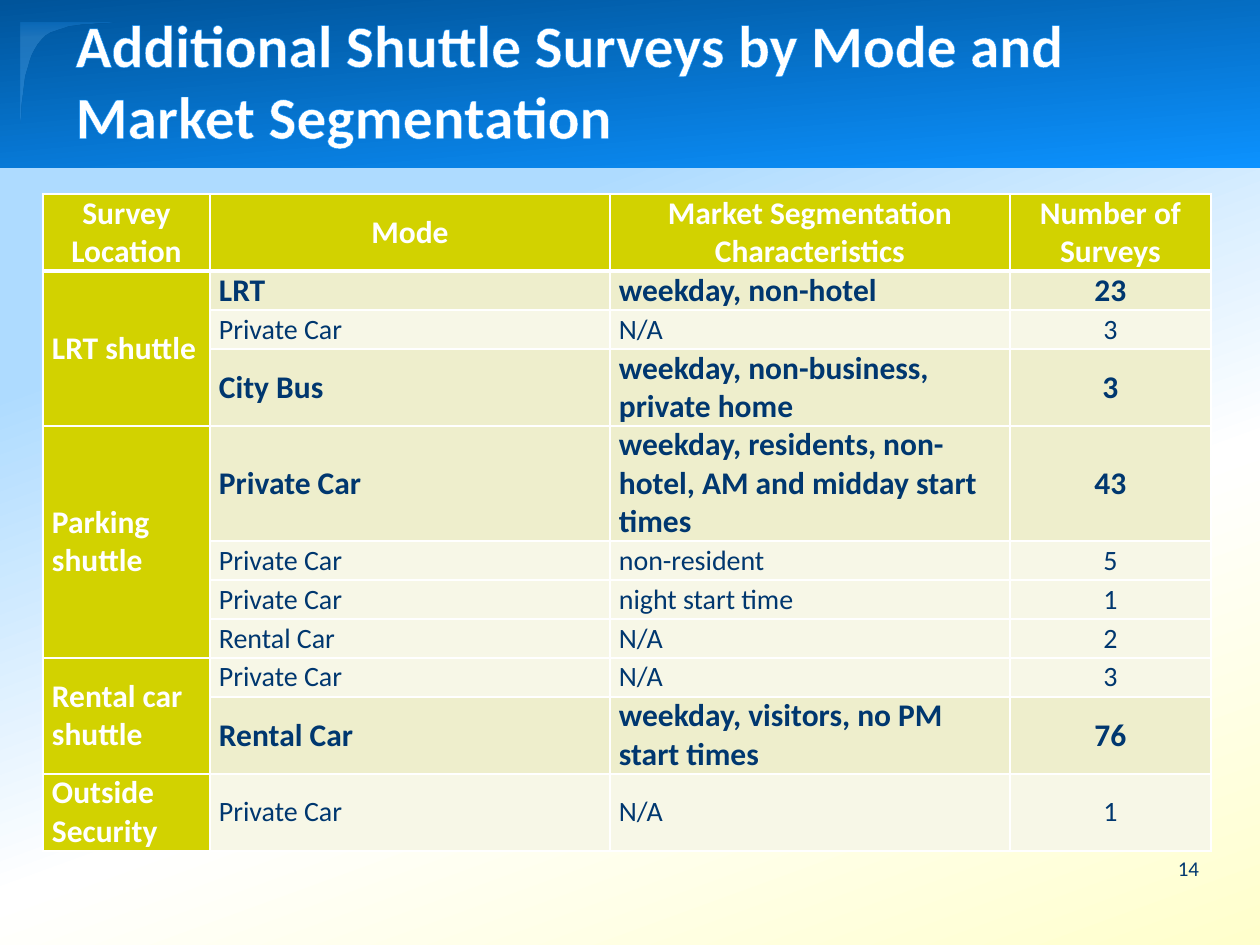
from lxml import etree
from pptx import Presentation
from pptx.dml.color import RGBColor
from pptx.enum.shapes import MSO_SHAPE
from pptx.enum.text import MSO_ANCHOR, MSO_AUTO_SIZE, PP_ALIGN
from pptx.oxml.ns import qn
from pptx.util import Pt

RECTANGLE = MSO_SHAPE.RECTANGLE
MIDDLE, BOTTOM = MSO_ANCHOR.MIDDLE, MSO_ANCHOR.BOTTOM
LEFT, CENTER = PP_ALIGN.LEFT, PP_ALIGN.CENTER
NO_FIT = MSO_AUTO_SIZE.NONE

WHITE = RGBColor(0xFF, 0xFF, 0xFF)
CREAM = RGBColor(0xFF, 0xFF, 0xCC)
SKY = RGBColor(0xAE, 0xDB, 0xFF)
DEEP_BLUE = RGBColor(0x00, 0x54, 0x9A)
BRIGHT_BLUE = RGBColor(0x0C, 0x92, 0xFF)
GLOW = RGBColor(0x29, 0x9E, 0xFF)
PALE_GLOW = RGBColor(0x7D, 0xC4, 0xFF)
NAVY = RGBColor(0x00, 0x37, 0x6F)
OLIVE = RGBColor(0xD2, 0xD2, 0x00)
STRONG_ROW = RGBColor(0xEE, 0xEE, 0xCC)
LIGHT_ROW = RGBColor(0xF7, 0xF7, 0xE7)

FONT = "Calibri"
PX = 914400 / 126  # EMU in one px


def px(length):
    return round(length * PX)


def shade(fill, owner, angle, stops):
    """Gradient with (position, colour, opacity) stops, angle clockwise."""
    fill.gradient()
    fill.gradient_angle = (360 - angle) % 360
    stop_list = next(owner.iter(qn("a:gsLst")))
    stop_list.clear()
    for position, colour, opacity in stops:
        stop = etree.SubElement(stop_list, qn("a:gs"), pos=str(position * 1000))
        tint = etree.SubElement(stop, qn("a:srgbClr"), val=str(colour))
        if opacity < 100:
            etree.SubElement(tint, qn("a:alpha"), val=str(opacity * 1000))


deck = Presentation()
deck.slide_width, deck.slide_height = px(1260), px(945)
page = deck.slides.add_slide(deck.slide_layouts[5])

# Background
shade(page.background.fill, page.element, 70,
      [(28, SKY, 100), (64, WHITE, 100), (100, CREAM, 100)])

# Title band
band = page.shapes.add_shape(RECTANGLE, 0, 0, px(1260), px(168))
shade(band.fill, band.element, 85, [(0, DEEP_BLUE, 100), (100, BRIGHT_BLUE, 100)])

# Corner glint, its curves sampled as short lines
curves = [
    [(42, 40), (59, 24), (88, 25), (123, 23)],
    [(21, 23), (21, 55), (20, 98), (21, 123)],
    [(21, 123), (24, 91), (25, 57), (42, 40)],
]
STEPS = 12
outline = []
for curve in curves:
    for step in range(STEPS + 1):
        t = step / STEPS
        weights = [(1 - t) ** 3, 3 * t * (1 - t) ** 2, 3 * t ** 2 * (1 - t), t ** 3]
        outline.append(tuple(sum(w * point[axis] for w, point in zip(weights, curve))
                             for axis in (0, 1)))
builder = page.shapes.build_freeform(*outline[0], scale=PX)
builder.add_line_segments(outline[1:], close=True)
glint = builder.convert_to_shape()
shade(glint.fill, glint.element, 90, [(0, GLOW, 22), (15, PALE_GLOW, 23)])
for shape in (band, glint):
    shape.line.fill.background()
    shape.shadow.inherit = False

# Title, brought in front of the band
title = page.shapes.title
page.shapes.element.append(title.element)
title.left, title.top, title.width, title.height = px(63), px(21), px(1134), px(136)
frame = title.text_frame
frame.text = "Additional Shuttle Surveys by Mode and Market Segmentation"
frame.auto_size, frame.vertical_anchor, frame.word_wrap = NO_FIT, BOTTOM, True
para = frame.paragraphs[0]
para.alignment = LEFT
span = para.runs[0]
for name, value in {"name": FONT, "size": Pt(34), "bold": True}.items():
    setattr(span.font, name, value)
span.font.color.rgb = WHITE
edge = etree.Element(qn("a:ln"), w=str(Pt(0.75)))
edge_fill = etree.SubElement(edge, qn("a:solidFill"))
etree.SubElement(edge_fill, qn("a:srgbClr"), val=str(BRIGHT_BLUE))
span.font.fill  # the run properties exist before the outline goes first
next(title.element.iter(qn("a:rPr"))).insert(0, edge)

# Page number
box = page.shapes.add_textbox(px(1155), px(843), px(67), px(50))
frame = box.text_frame
frame.word_wrap, frame.vertical_anchor = True, MIDDLE
para = frame.paragraphs[0]
para.text, para.alignment = "14", CENTER
para.font.name, para.font.size = FONT, Pt(12)
para.font.color.rgb = NAVY

# Survey table: location, mode, segment, count, lines of text, stressed
header = ("Survey Location", "Mode", "Market Segmentation Characteristics",
          "Number of Surveys", 2, True)
surveys = [
    ("LRT shuttle", "LRT", "weekday, non-hotel", "23", 1, True),
    ("", "Private Car", "N/A", "3", 1, False),
    ("", "City Bus", "weekday, non-business, private home", "3", 2, True),
    ("Parking shuttle", "Private Car",
     "weekday, residents, non-hotel, AM and midday start times", "43", 3, True),
    ("", "Private Car", "non-resident", "5", 1, False),
    ("", "Private Car", "night start time", "1", 1, False),
    ("", "Rental Car", "N/A", "2", 1, False),
    ("Rental car shuttle", "Private Car", "N/A", "3", 1, False),
    ("", "Rental Car", "weekday, visitors, no PM start times", "76", 2, True),
    ("Outside Security", "Private Car", "N/A", "1", 2, False),
]
rows = [header] + surveys
row_heights = {1: 39, 2: 77, 3: 115}
column_widths = [167, 400, 400, 201]
table = page.shapes.add_table(
    len(rows), len(column_widths), px(43), px(194), px(sum(column_widths)),
    px(sum(row_heights[row[4]] for row in rows))).table
for column, width in zip(table.columns, column_widths):
    column.width = px(width)

for r, (*texts, lines, stressed) in enumerate(rows):
    table.rows[r].height = px(row_heights[lines])
    for c, text in enumerate(texts):
        cell = table.cell(r, c)
        heading = r == 0 or c == 0
        strong = heading or stressed
        for name, value in {"text": text, "vertical_anchor": MIDDLE,
                            "margin_left": px(9), "margin_right": px(9),
                            "margin_top": 0, "margin_bottom": 0}.items():
            setattr(cell, name, value)
        cell.fill.solid()
        cell.fill.fore_color.rgb = OLIVE if heading else STRONG_ROW if stressed else LIGHT_ROW

        para = cell.text_frame.paragraphs[0]
        para.alignment = CENTER if r == 0 or c == 3 else LEFT
        for name, value in {"name": FONT, "size": Pt(18 if strong else 16),
                            "bold": strong}.items():
            setattr(para.font, name, value)
        para.font.color.rgb = WHITE if heading else NAVY

        # White borders, heavier under the header
        borders = {"a:lnL": 1, "a:lnR": 1, "a:lnT": 3 if r == 1 else 1,
                   "a:lnB": 3 if r == 0 else 1}
        properties = next(cell._tc.iter(qn("a:tcPr")))
        for position, (tag, weight) in enumerate(borders.items()):
            border = etree.Element(qn(tag), w=str(Pt(weight)))
            border_fill = etree.SubElement(border, qn("a:solidFill"))
            etree.SubElement(border_fill, qn("a:srgbClr"), val=str(WHITE))
            properties.insert(position, border)

# Each location spans its rows
starts = [r for r, row in enumerate(rows) if row[0]] + [len(rows)]
for first, following in zip(starts, starts[1:]):
    if following - first > 1:
        table.cell(first, 0).merge(table.cell(following - 1, 0))

deck.save("out.pptx")
